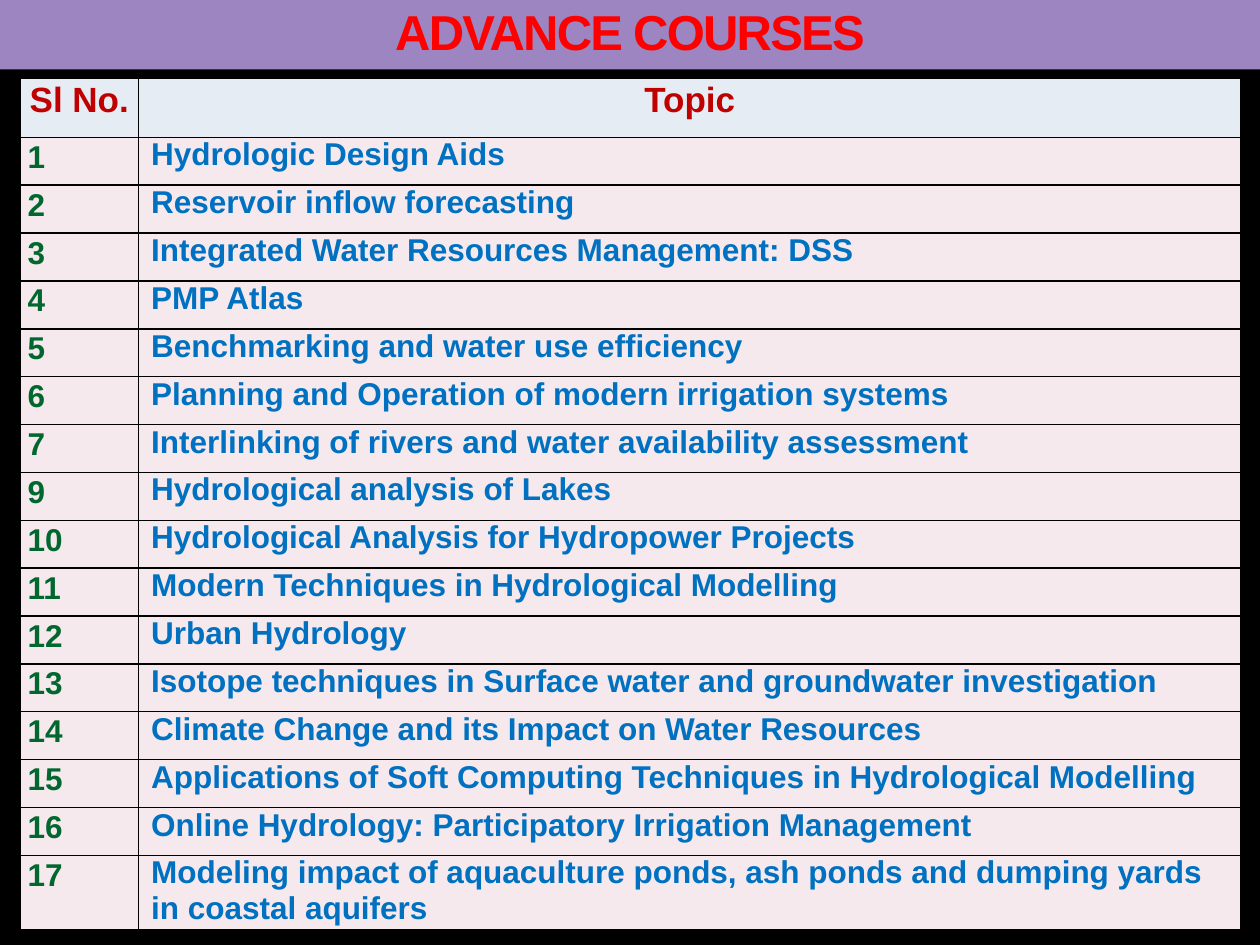
from lxml.etree import SubElement
from pptx import Presentation
from pptx.dml.color import RGBColor
from pptx.enum.text import MSO_ANCHOR as Anchor, PP_ALIGN as Align
from pptx.oxml import parse_xml
from pptx.oxml.ns import nsdecls, qn
from pptx.util import Inches, Pt

TOPICS = [
    ("1", "Hydrologic Design Aids"),
    ("2", "Reservoir inflow forecasting"),
    ("3", "Integrated Water Resources Management: DSS"),
    ("4", "PMP Atlas"),
    ("5", "Benchmarking and water use efficiency"),
    ("6", "Planning and Operation of modern irrigation systems"),
    ("7", "Interlinking of rivers and water availability assessment"),
    ("9", "Hydrological analysis of Lakes"),
    ("10", "Hydrological Analysis for Hydropower Projects"),
    ("11", "Modern Techniques in Hydrological Modelling"),
    ("12", "Urban Hydrology"),
    ("13", "Isotope techniques in Surface water and groundwater investigation"),
    ("14", "Climate Change and its Impact on Water Resources"),
    ("15", "Applications of Soft Computing Techniques in Hydrological Modelling"),
    ("16", "Online Hydrology: Participatory Irrigation Management"),
    ("17", "Modeling impact of aquaculture ponds, ash ponds and dumping yards in coastal aquifers"),
]


def color(value):
    """Turn a hex string into a colour."""
    return RGBColor.from_string(value)


class CourseSlide:
    """Hold the style and the current slide."""

    font = "Arial"
    black, banner = "000000", "9C85C0"
    red, dark_red, green, blue = "FF0000", "C00000", "00682F", "0070C0"
    header_fill, body_fill = "E6ECF3", "F6E9ED"

    def __init__(self, presentation):
        """Add a title-only slide with a plain background."""
        self.width, self.height = presentation.slide_width, presentation.slide_height
        self.slide = presentation.slides.add_slide(presentation.slide_layouts[5])
        background = self.slide.background.fill
        background.solid()
        background.fore_color.rgb = color(self.black)

    def add_run(self, paragraph, text, size, hex_color):
        """Add one bold run to a paragraph."""
        run = paragraph.add_run()
        run.text = text
        run.font.name, run.font.size, run.font.bold = self.font, Pt(size), True
        run.font.color.rgb = color(hex_color)
        return run

    def add_title(self, text, height):
        """Place the title as a banner across the top."""
        title = self.slide.shapes.title
        title.left, title.top = 0, 0
        title.width, title.height = self.width, round(self.height * height)
        title.fill.solid()
        title.fill.fore_color.rgb = color(self.banner)
        title._element.spPr.append(parse_xml(
            f'<a:effectLst {nsdecls("a")}><a:innerShdw blurRad="{Pt(7.5)}">'
            f'<a:srgbClr val="{self.black}"><a:alpha val="50000"/></a:srgbClr>'
            '</a:innerShdw></a:effectLst>'))
        title.text_frame.vertical_anchor = Anchor.MIDDLE
        paragraph = title.text_frame.paragraphs[0]
        paragraph.alignment, paragraph.line_spacing = Align.CENTER, 0.9
        run = self.add_run(paragraph, text, 28, self.red)
        run.font._element.set("spc", "-100")

    def add_borders(self, cell):
        """Draw a thin black line on every side of a cell."""
        properties = cell._tc.get_or_add_tcPr()
        for position, side in enumerate(("lnL", "lnR", "lnT", "lnB")):
            line = parse_xml(f'<a:{side} {nsdecls("a")} w="{Pt(1)}"/>')
            fill = SubElement(line, qn("a:solidFill"))
            SubElement(fill, qn("a:srgbClr"), val=self.black)
            properties.insert(position, line)

    def add_cell(self, cell, text, size, hex_color, fill, alignment, spacing=1.07, indent=0):
        """Fill, border and write one table cell."""
        cell.margin_left = cell.margin_right = Inches(0.06)
        cell.margin_top = cell.margin_bottom = 0
        cell.fill.solid()
        cell.fill.fore_color.rgb = color(fill)
        self.add_borders(cell)
        paragraph = cell.text_frame.paragraphs[0]
        paragraph.alignment, paragraph.line_spacing = alignment, spacing
        if indent:
            paragraph._p.get_or_add_pPr().set("marL", str(Inches(indent)))
        self.add_run(paragraph, text, size, hex_color)

    def add_topic_table(self, headings, topics, left, top, columns, rows):
        """Add the table, with its column widths and row heights in inches."""
        frame = self.slide.shapes.add_table(
            len(rows), len(columns), Inches(left), Inches(top),
            Inches(sum(columns)), Inches(sum(rows)))
        table = frame.table
        for column, width in zip(table.columns, columns):
            column.width = Inches(width)
        for row, height in zip(table.rows, rows):
            row.height = Inches(height)
        for index, heading in enumerate(headings):
            self.add_cell(table.cell(0, index), heading, 20, self.dark_red,
                          self.header_fill, Align.CENTER)
        for index, (number, topic) in enumerate(topics, 1):
            self.add_cell(table.cell(index, 0), number, 18, self.green,
                          self.body_fill, Align.JUSTIFY)
            self.add_cell(table.cell(index, 1), topic, 18, self.blue,
                          self.body_fill, Align.LEFT, 1.0, 0.04)


def main():
    """Build and save the course list."""
    presentation = Presentation()
    presentation.slide_width, presentation.slide_height = Inches(10), Inches(7.5)
    page = CourseSlide(presentation)
    page.add_title("ADVANCE COURSES", 0.55 / 7.5)
    row_heights = [0.47] + [0.38] * (len(TOPICS) - 1) + [0.59]
    page.add_topic_table(("Sl No.", "Topic"), TOPICS, 0.16, 0.62, (0.94, 8.75), row_heights)
    presentation.save("out.pptx")


if __name__ == "__main__":
    main()
